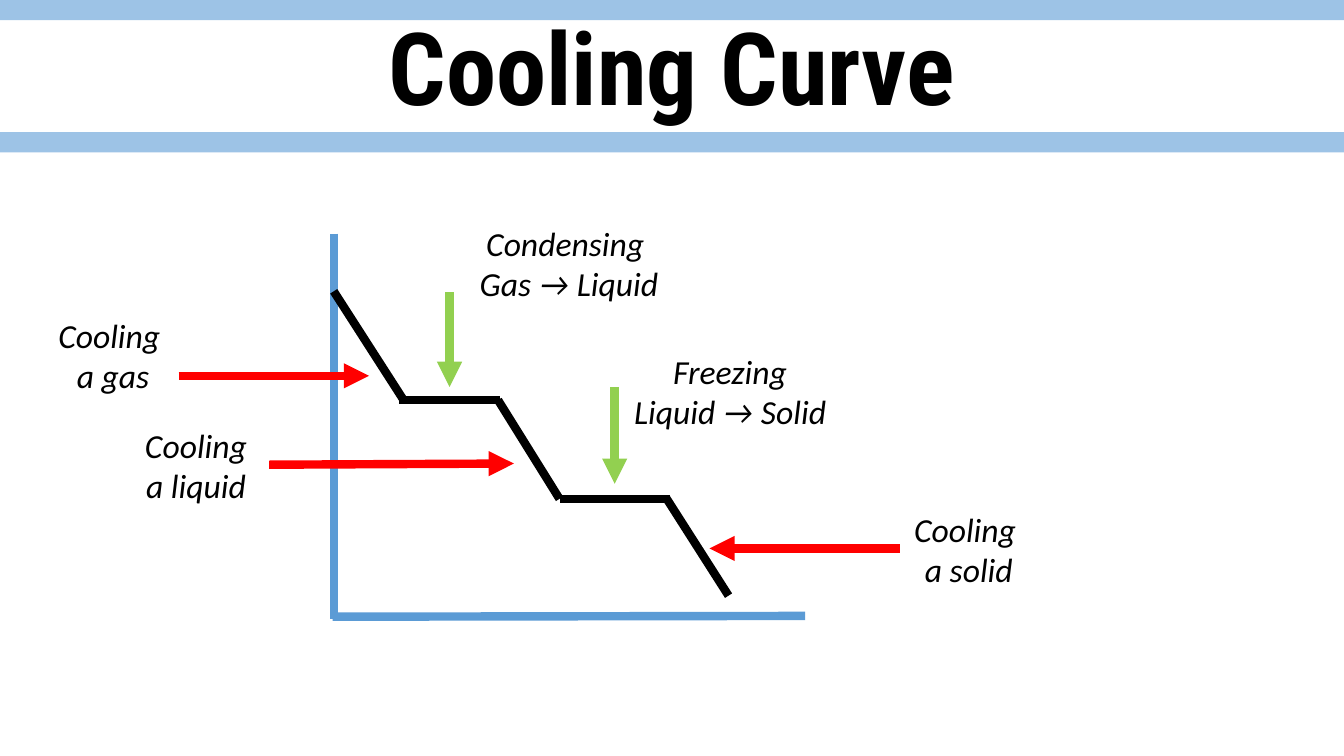
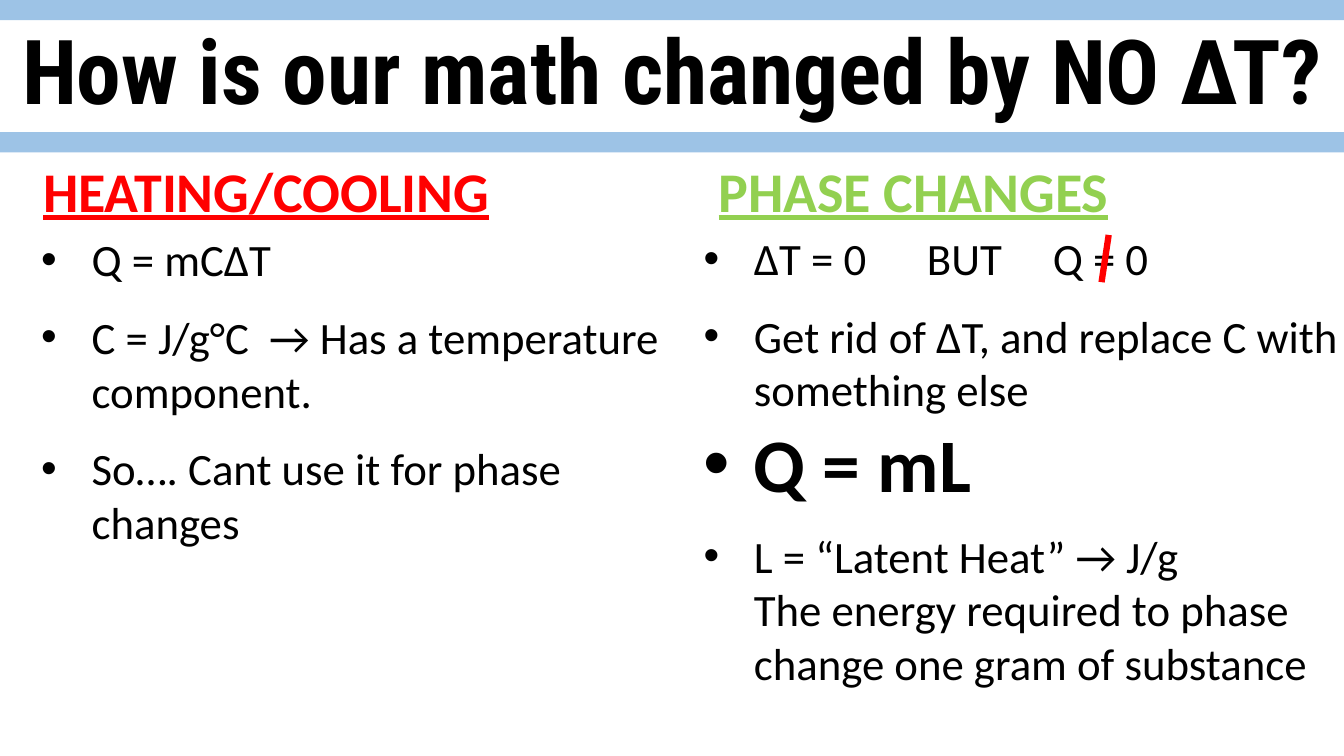
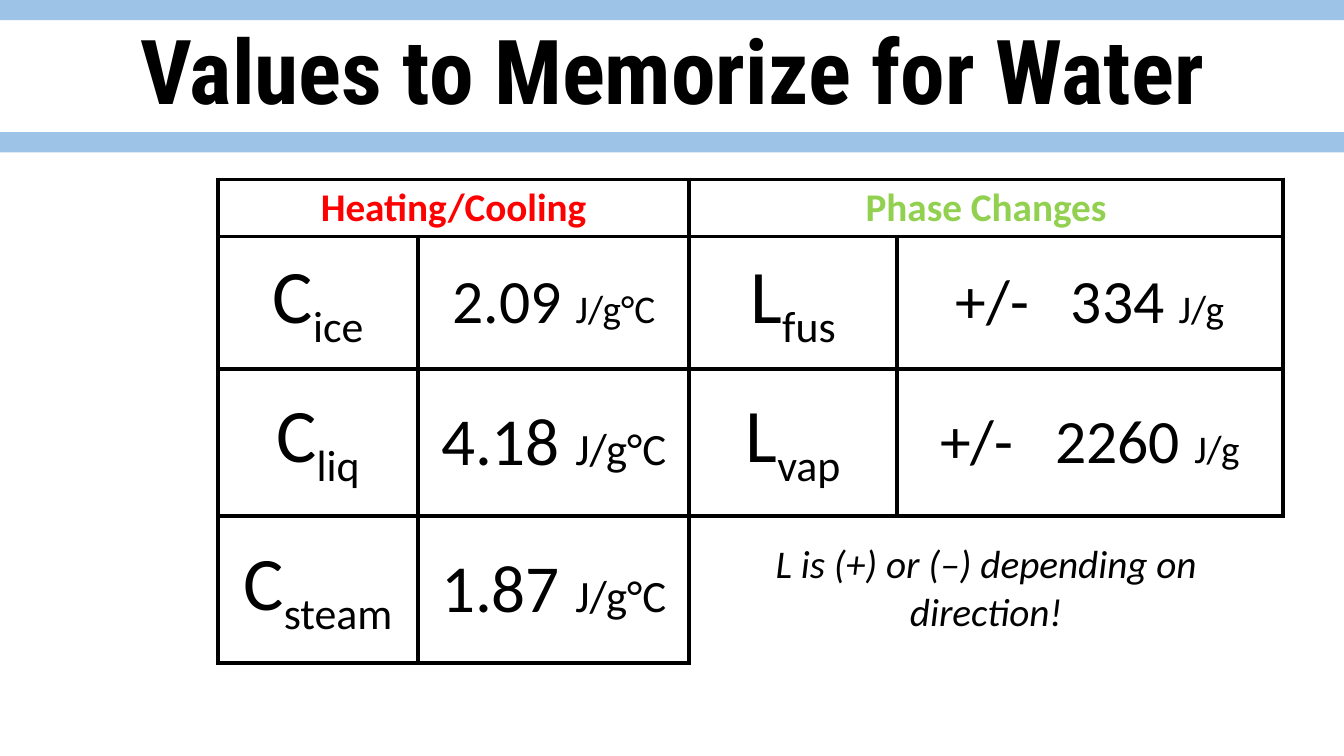
from typing import NamedTuple

from lxml.etree import SubElement
from pptx import Presentation
from pptx.dml.color import RGBColor
from pptx.enum.shapes import MSO_CONNECTOR, MSO_SHAPE
from pptx.enum.text import MSO_ANCHOR as ANCHOR, PP_ALIGN as ALIGN
from pptx.oxml.ns import qn
from pptx.util import Cm, Pt

COLORS = {
    "band": "9DC3E6",
    "axis": "5B9BD5",
    "black": "000000",
    "heat": "FF0000",
    "phase": "92D050",
}
BODY_FONT = "Calibri"
TITLE_FONT = "Roboto Condensed"
WIDTH, HEIGHT = 33.87, 19.05
BAND_TOPS = (0, 3.33)
BAND_HEIGHT = 0.51
INDENT = 1.27


class Box(NamedTuple):
    x: float
    y: float
    w: float
    h: float


class Run(NamedTuple):
    text: str
    size: float | None = None
    bold: bool | None = None
    baseline: int = 0
    spacing: int = 0


class Para(NamedTuple):
    runs: list[Run]
    before: float = 0


class Stroke(NamedTuple):
    x1: float
    y1: float
    x2: float
    y2: float
    color: str = "black"
    arrow: bool = False
    width: float = 6


class Label(NamedTuple):
    box: Box
    lines: list[str]


class Column(NamedTuple):
    heading: str
    heading_box: Box
    align: ALIGN
    color: str
    body_box: Box
    paras: list[Para]


def rgb(name: str) -> RGBColor:
    return RGBColor.from_string(COLORS[name])


def one(text: str, before: float = 0, **fmt) -> Para:
    return Para([Run(text, **fmt)], before)


def write(tf, paras: list[Para], *, size: float, font: str = BODY_FONT, color: str = "black",
          bold: bool = False, italic: bool = False, underline: bool = False,
          align: ALIGN = ALIGN.LEFT, bullet: bool = False) -> None:
    tf.word_wrap = True
    for i, para in enumerate(paras):
        p = tf.paragraphs[0] if i == 0 else tf.add_paragraph()
        p.alignment = align
        if para.before:
            p.space_before = Pt(para.before)
        if bullet:
            pPr = p._p.get_or_add_pPr()
            pPr.set("marL", str(Cm(INDENT)))
            pPr.set("indent", str(-Cm(INDENT)))
            SubElement(pPr, qn("a:buFont"), typeface="Arial")
            SubElement(pPr, qn("a:buChar"), char="•")
        for run in para.runs:
            for k, line in enumerate(run.text.split("\n")):
                if k:
                    p.add_line_break()
                r = p.add_run()
                r.text = line
                f = r.font
                f.name, f.size = font, Pt(run.size or size)
                f.bold = bold if run.bold is None else run.bold
                f.italic, f.underline = italic, underline
                f.color.rgb = rgb(color)
                if run.baseline:
                    r._r.get_or_add_rPr().set("baseline", str(run.baseline * 1000))
                if run.spacing:
                    r._r.get_or_add_rPr().set("spc", str(run.spacing * 100))


def add_text(s, box: Box, paras: list[Para], **fmt) -> None:
    write(s.shapes.add_textbox(*map(Cm, box)).text_frame, paras, **fmt)


def add_stroke(s, stroke: Stroke) -> None:
    ends = map(Cm, (stroke.x1, stroke.y1, stroke.x2, stroke.y2))
    sp = s.shapes.add_connector(MSO_CONNECTOR.STRAIGHT, *ends)
    sp.line.color.rgb = rgb(stroke.color)
    sp.line.width = Pt(stroke.width)
    if stroke.arrow:
        SubElement(sp.line._get_or_add_ln(), qn("a:tailEnd"), type="triangle")
    SubElement(sp._element.spPr, qn("a:effectLst"))


def add_slide(prs, title: str, size: float = 64, top: float = 0.25):
    s = prs.slides.add_slide(prs.slide_layouts[6])
    for y in BAND_TOPS:
        sp = s.shapes.add_shape(MSO_SHAPE.RECTANGLE, 0, Cm(y), Cm(WIDTH), Cm(BAND_HEIGHT))
        sp.shadow.inherit = False
        sp.fill.solid()
        sp.fill.fore_color.rgb = rgb("band")
        sp.line.fill.background()
    add_text(s, Box(0, top, WIDTH, 3), [one(title)], size=size, font=TITLE_FONT,
             bold=True, align=ALIGN.CENTER)
    return s


STROKES = [
    Stroke(8.41, 5.89, 8.41, 15.6, "axis"),
    Stroke(20.29, 15.52, 8.38, 15.54, "axis"),
    Stroke(8.41, 7.34, 10.19, 10.11),
    Stroke(14.1, 12.57, 16.89, 12.57),
    Stroke(12.55, 10.08, 14.1, 12.57),
    Stroke(10.06, 10.08, 12.6, 10.08),
    Stroke(16.79, 12.55, 18.36, 15.01),
    Stroke(22.68, 13.82, 17.88, 13.82, "heat", True),
    Stroke(6.78, 11.71, 12.95, 11.68, "heat", True),
    Stroke(4.5, 9.47, 9.3, 9.47, "heat", True),
    Stroke(11.33, 7.37, 11.33, 9.75, "phase", True),
    Stroke(15.49, 9.75, 15.49, 12.19, "phase", True),
]
LABELS = [
    Label(Box(22.76, 12.7, 3.12, 2.31), ["Cooling\n a solid"]),
    Label(Box(2.82, 10.57, 4.24, 2.31), ["Cooling\na liquid"]),
    Label(Box(0.74, 7.8, 4.22, 2.31), ["Cooling \na gas"]),
    Label(Box(15.62, 8.71, 5.56, 2.31), ["Freezing", "Liquid → Solid"]),
    Label(Box(11.56, 5.49, 5.56, 2.31), ["Condensing ", "Gas → Liquid"]),
]


def cooling_curve(prs) -> None:
    s = add_slide(prs, "Cooling Curve", size=72, top=0)
    for stroke in STROKES:
        add_stroke(s, stroke)
    for label in LABELS:
        add_text(s, label.box, [one(line) for line in label.lines], size=24,
                 italic=True, align=ALIGN.CENTER)


COLUMNS = [
    Column("HEATING/COOLING", Box(0.41, 3.81, 12.6, 1.96), ALIGN.CENTER, "heat",
           Box(0.79, 5.72, 16.69, 8.28), [
               one("Q = mC∆T"),
               Para([Run("C = J/g°C"), Run(" ", spacing=7),
                     Run("→ Has a temperature component.")], 17),
               one("So…. Cant use it for phase changes", 17),
           ]),
    Column("PHASE CHANGES", Box(17.86, 3.81, 12.37, 1.96), ALIGN.LEFT, "phase",
           Box(17.48, 5.69, 16.69, 12.34), [
               Para([Run("∆T = 0"), Run(" ", spacing=36), Run("BUT"),
                     Run(" ", spacing=29), Run("Q = 0")]),
               one("Get rid of ∆T, and replace C with something else", 17),
               one("Q = mL", 1, size=54, bold=True),
               one("L = “Latent Heat” → J/g\n"
                   "The energy required to phase change one gram of substance", 14.6),
           ]),
]


def math_changes(prs) -> None:
    s = add_slide(prs, "How is our math changed by NO ∆T?")
    for col in COLUMNS:
        add_text(s, col.heading_box, [one(col.heading)], size=40, color=col.color,
                 bold=True, underline=True, align=col.align)
        add_text(s, col.body_box, col.paras, size=32, bullet=True)
    add_stroke(s, Stroke(27.94, 5.92, 27.76, 7.11, "heat", width=4.5))


COL_WIDTHS = (5.05, 6.83, 5.23, 9.73)
ROW_HEIGHTS = (1.4, 3.33, 3.71, 3.71)


def symbol(letter: str, sub: str) -> list[Run]:
    return [Run(letter, 54), Run(sub, 54, baseline=-25)]


def heat(value: str, size: float, unit_size: float) -> list[Run]:
    return [Run(value + " ", size), Run("J/g°C", unit_size)]


def latent(value: str) -> list[Run]:
    return [Run("+/-", 44), Run(" ", 44, spacing=20), Run(value + " ", 44), Run("J/g", 28)]


VALUES = [
    [symbol("C", "ice"), heat("2.09", 44, 28), symbol("L", "fus"), latent("334")],
    [symbol("C", "liq"), heat("4.18", 48, 32), symbol("L", "vap"), latent("2260")],
    [symbol("C", "steam"), heat("1.87", 48, 32)],
]


def style_cell(cell, sides: str) -> None:
    tcPr = cell._tc.get_or_add_tcPr()
    for side in "LRTB":
        ln = SubElement(tcPr, qn(f"a:ln{side}"), w=str(Pt(3)))
        if side in sides:
            fill = SubElement(ln, qn("a:solidFill"))
            SubElement(fill, qn("a:srgbClr"), val=COLORS["black"])
        else:
            SubElement(ln, qn("a:noFill"))
    cell.fill.background()


def water_values(prs) -> None:
    s = add_slide(prs, "Values to Memorize for Water")
    box = Box(5.49, 4.52, sum(COL_WIDTHS), sum(ROW_HEIGHTS))
    table = s.shapes.add_table(len(ROW_HEIGHTS), len(COL_WIDTHS), *map(Cm, box)).table
    table.first_row = table.horz_banding = False
    for column, w in zip(table.columns, COL_WIDTHS):
        column.width = Cm(w)
    for row, h in zip(table.rows, ROW_HEIGHTS):
        row.height = Cm(h)
    for i in range(len(ROW_HEIGHTS)):
        for j in range(len(COL_WIDTHS)):
            note_sides = {(3, 2): "LT", (3, 3): "T"}
            style_cell(table.cell(i, j), note_sides.get((i, j), "LRTB"))
    for i, j in ((0, 0), (0, 2), (3, 2)):
        table.cell(i, j).merge(table.cell(i, j + 1))
    for j, text, color in ((0, "Heating/Cooling", "heat"), (2, "Phase Changes", "phase")):
        write(table.cell(0, j).text_frame, [one(text)], size=28, color=color,
              bold=True, align=ALIGN.CENTER)
    for i, values in enumerate(VALUES, 1):
        for j, runs in enumerate(values):
            cell = table.cell(i, j)
            cell.vertical_anchor = ANCHOR.MIDDLE
            write(cell.text_frame, [Para(runs)], size=44, align=ALIGN.CENTER)
    note = table.cell(3, 2)
    note.vertical_anchor = ANCHOR.MIDDLE
    write(note.text_frame, [one("L is (+) or (–) depending on direction!")], size=28,
          italic=True, align=ALIGN.CENTER)


def main() -> None:
    prs = Presentation()
    prs.slide_width, prs.slide_height = Cm(WIDTH), Cm(HEIGHT)
    cooling_curve(prs)
    math_changes(prs)
    water_values(prs)
    prs.save("out.pptx")


if __name__ == "__main__":
    main()
